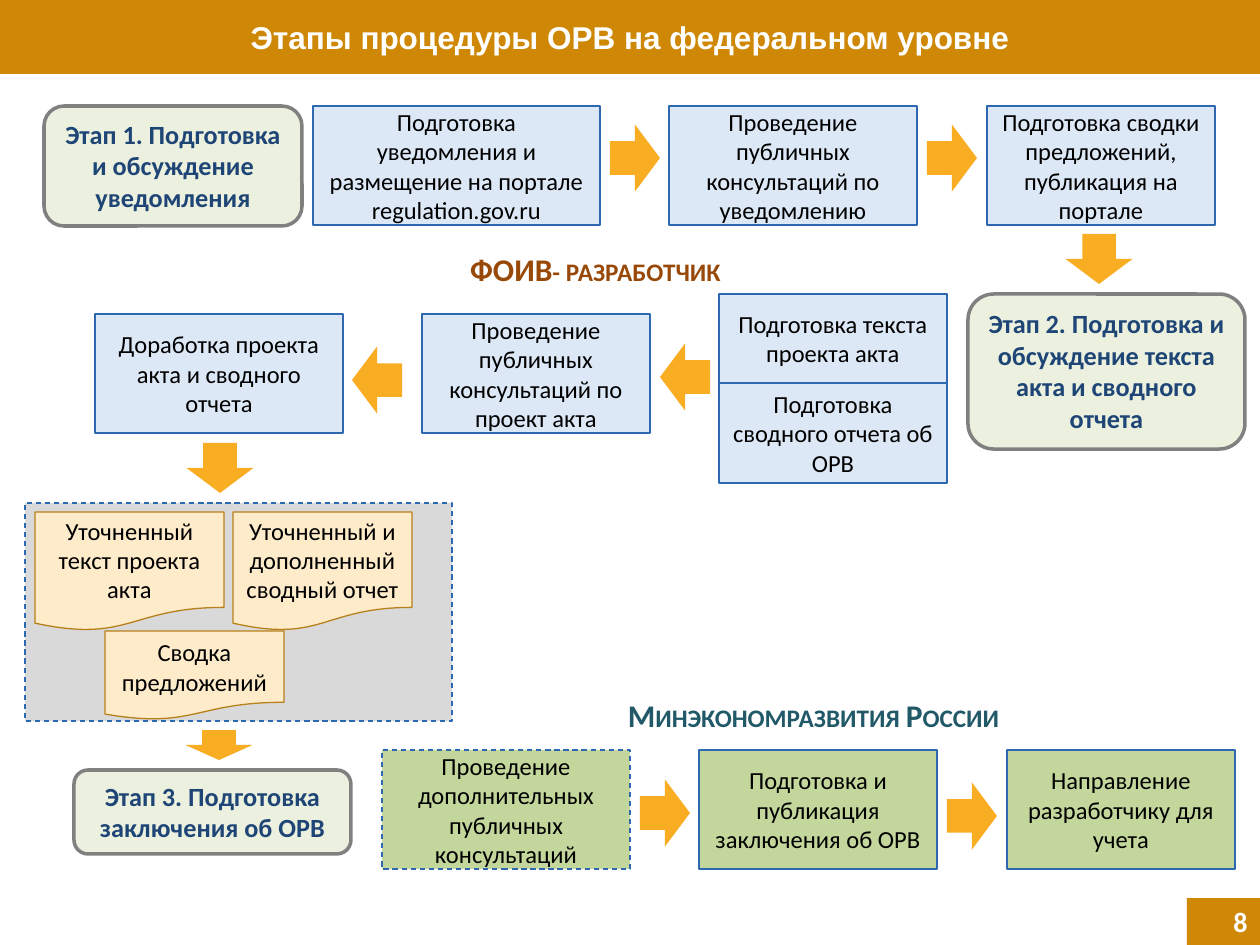
from pptx import Presentation
from pptx.dml.color import RGBColor
from pptx.enum.dml import MSO_LINE
from pptx.enum.shapes import MSO_SHAPE as Shape
from pptx.enum.text import MSO_ANCHOR as Anchor, MSO_AUTO_SIZE as AutoSize, PP_ALIGN as Align
from pptx.util import Emu, Pt

EMU_PER_PX = 914400 / 126
COLORS = {
    "band": "CF8806", "white": "FFFFFF", "black": "000000",
    "stage": "EBF1DE", "stage_line": "808080", "stage_text": "1E4576",
    "step": "DDE8F6", "step_line": "2D68B1", "review": "C3D69B",
    "document": "FDEBCA", "document_line": "B8801A",
    "panel": "D9D9D9", "arrow": "F9AD23",
    "developer": "984807", "ministry": "215968",
}
RIGHT, DOWN, LEFT = 0, 90, 180
STEP_HEIGHT = 119
ROW_1, ROW_2, ROW_3 = 106, 314, 750

STAGES = [
    ("Этап 1. Подготовка и обсуждение уведомления", 44, 106, 258, 120),
    ("Этап 2. Подготовка и обсуждение текста акта и сводного отчета", 968, 294, 277, 155),
    ("Этап 3. Подготовка заключения об ОРВ", 74, 770, 277, 84),
]
DEVELOPER_STEPS = [
    ("Подготовка уведомления и размещение на портале regulation.gov.ru",
     313, ROW_1, 287, STEP_HEIGHT),
    ("Проведение публичных консультаций по уведомлению", 669, ROW_1, 248, STEP_HEIGHT),
    ("Подготовка сводки предложений, публикация на портале",
     987, ROW_1, 228, STEP_HEIGHT),
    ("Подготовка текста проекта акта", 719, 294, 228, 89),
    ("Подготовка сводного отчета об ОРВ", 719, 383, 228, 100),
    ("Проведение публичных консультаций по проект акта", 422, ROW_2, 228, STEP_HEIGHT),
    ("Доработка проекта акта и сводного отчета", 95, ROW_2, 248, STEP_HEIGHT),
]
DOCUMENTS = [
    ("Уточненный текст проекта акта", 35, 512, 189, 119),
    ("Уточненный и дополненный сводный отчет", 233, 512, 179, 119),
    ("Сводка предложений", 105, 631, 179, 89),
]
REVIEW_STEPS = [
    ("Проведение дополнительных публичных консультаций", 382, 248, True),
    ("Подготовка и публикация заключения об ОРВ", 699, 238, False),
    ("Направление разработчику для учета", 1007, 228, False),
]
# Centre x, centre y, direction, length
ARROWS = [
    (635, 158, RIGHT, 50), (952, 158, RIGHT, 50), (1099, 259, DOWN, 50),
    (685, 377, LEFT, 50), (377, 380, LEFT, 50), (220, 468, DOWN, 50),
    (219, 745, DOWN, 30), (665, 813, RIGHT, 50), (972, 816, RIGHT, 50),
]


def px(value):
    return Emu(round(value * EMU_PER_PX))


def rgb(name):
    return RGBColor.from_string(COLORS[name])


def write(shape, text, size, color, bold=False, font="Calibri",
          align=Align.CENTER, anchor=Anchor.MIDDLE):
    frame = shape.text_frame
    frame.word_wrap = True
    frame.auto_size = AutoSize.NONE
    frame.vertical_anchor = anchor
    para = frame.paragraphs[0]
    para.alignment = align
    span = para.add_run()
    span.text = text
    span.font.name = font
    span.font.size = Pt(size)
    span.font.bold = bold
    span.font.color.rgb = rgb(color)
    return para, span


def add_box(page, kind, left, top, width, height, fill, line=None,
            weight=0.75, dashed=False):
    box = page.shapes.add_shape(kind, px(left), px(top), px(width), px(height))
    box.shadow.inherit = False
    box.fill.solid()
    box.fill.fore_color.rgb = rgb(fill)
    if line is None:
        box.line.fill.background()
    else:
        box.line.color.rgb = rgb(line)
        box.line.width = Pt(weight)
    if dashed:
        box.line.dash_style = MSO_LINE.DASH
    return box


def add_title(page, text):
    title = page.shapes.title
    title.left, title.top, title.width, title.height = px(0), px(0), px(1260), px(74)
    title.fill.solid()
    title.fill.fore_color.rgb = rgb("band")
    write(title, text, 18, "white", bold=True, font="Arial")


def add_stage(page, text, *place):
    box = add_box(page, Shape.ROUNDED_RECTANGLE, *place, "stage", "stage_line", weight=2)
    para, _ = write(box, text, 15, "stage_text", bold=True, anchor=Anchor.TOP)
    para.space_after = Pt(6)
    box.text_frame.auto_size = AutoSize.SHAPE_TO_FIT_TEXT


def add_step(page, text, *place, fill="step", dashed=False):
    box = add_box(page, Shape.RECTANGLE, *place, fill, "step_line", dashed=dashed)
    write(box, text, 14, "black")


def add_document(page, text, *place):
    box = add_box(page, Shape.FLOWCHART_DOCUMENT, *place, "document", "document_line")
    write(box, text, 14, "black")


def add_arrow(page, center_x, center_y, direction, length, thickness=67):
    arrow = add_box(page, Shape.RIGHT_ARROW, center_x - length / 2,
                    center_y - thickness / 2, length, thickness, "arrow")
    arrow.rotation = direction


def add_owner(page, text, left, top, color):
    label = page.shapes.add_textbox(px(left), px(top), px(525), px(69))
    _, span = write(label, text, 18, color, bold=True)
    span.font._element.set("cap", "small")


def main():
    deck = Presentation()
    deck.slide_width, deck.slide_height = px(1260), px(945)
    page = deck.slides.add_slide(deck.slide_layouts[5])

    # Title band and page number
    add_title(page, "Этапы процедуры ОРВ на федеральном уровне")
    number = add_box(page, Shape.RECTANGLE, 1187, 898, 73, 47, "band")
    write(number, "8", 16, "white", bold=True, align=Align.RIGHT)

    # Stages and the developer's steps
    for stage in STAGES:
        add_stage(page, *stage)
    for step in DEVELOPER_STEPS:
        add_step(page, *step)

    # Resulting documents on their panel
    add_box(page, Shape.RECTANGLE, 25, 503, 427, 218, "panel", "step_line", dashed=True)
    for document in DOCUMENTS:
        add_document(page, *document)

    # Ministry's steps
    for text, left, width, dashed in REVIEW_STEPS:
        add_step(page, text, left, ROW_3, width, STEP_HEIGHT, fill="review", dashed=dashed)

    # Flow arrows and owner labels
    for arrow in ARROWS:
        add_arrow(page, *arrow)
    add_owner(page, "ФОИВ- разработчик", 333, 234, "developer")
    add_owner(page, "Минэкономразвития России", 551, 680, "ministry")

    deck.save("out.pptx")


if __name__ == "__main__":
    main()
